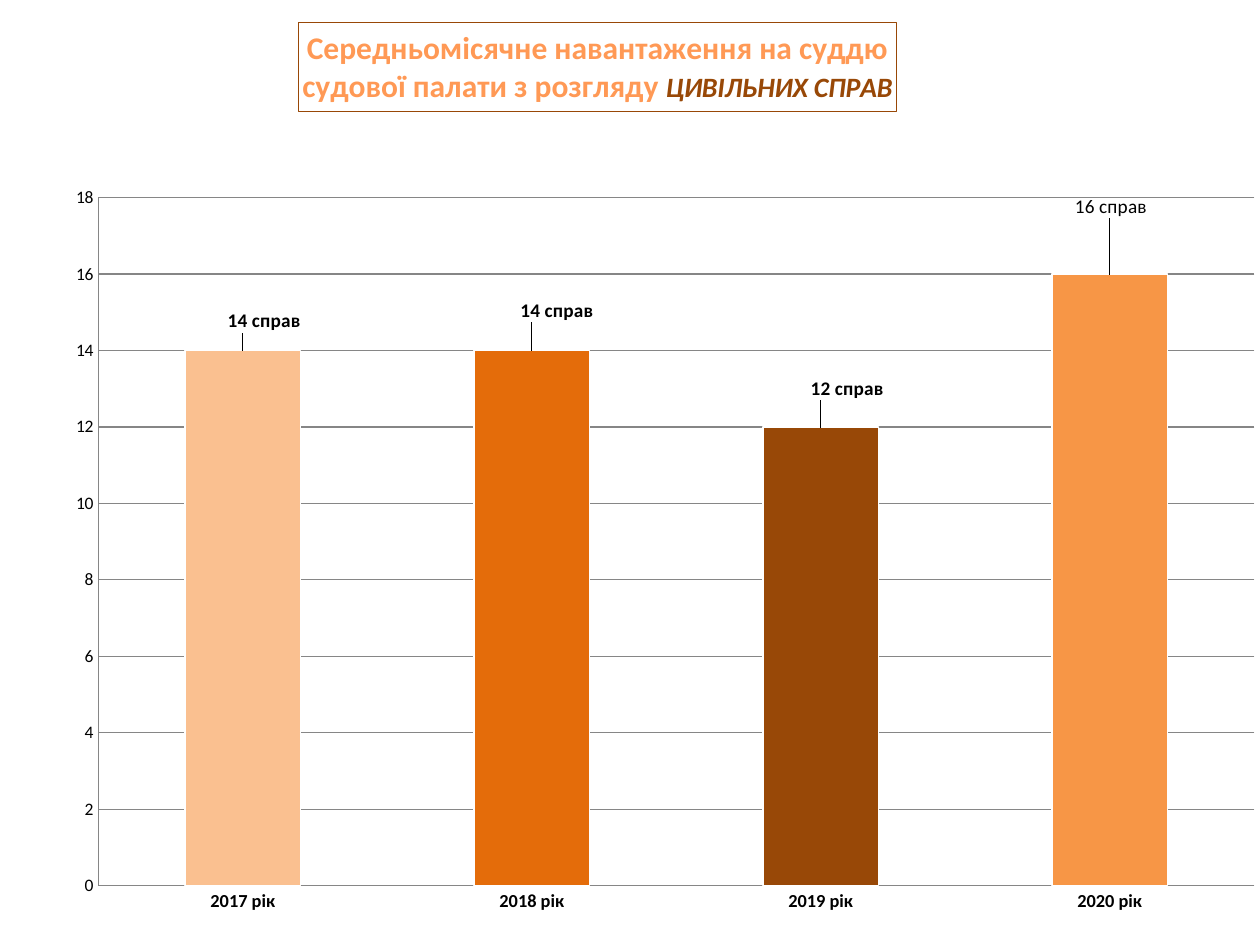
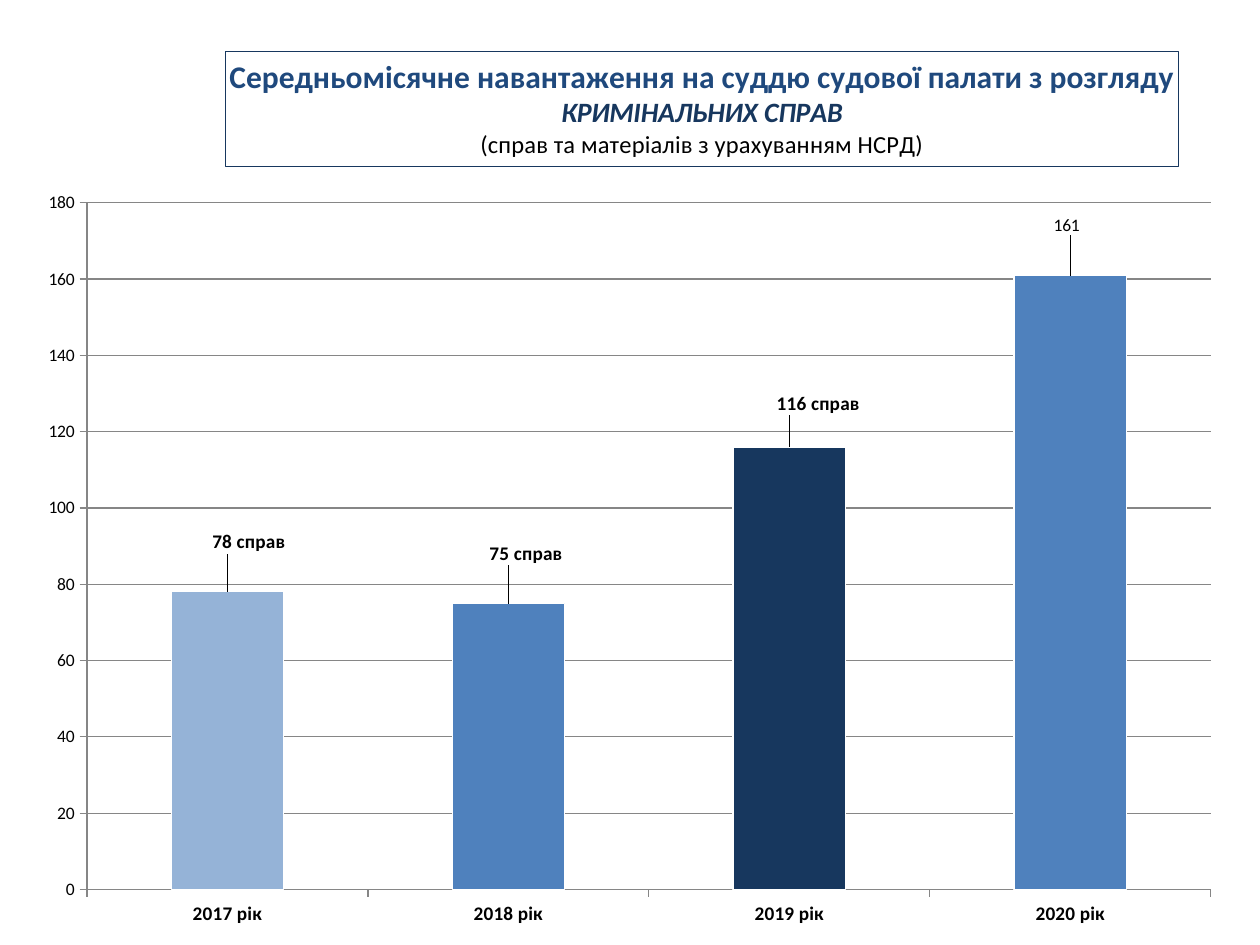
from lxml.etree import SubElement
from pptx import Presentation
from pptx.chart.data import CategoryChartData
from pptx.dml.color import RGBColor
from pptx.enum.chart import XL_CHART_TYPE, XL_LABEL_POSITION, XL_TICK_MARK
from pptx.enum.text import PP_ALIGN
from pptx.oxml.ns import qn
from pptx.util import Inches, Pt

FONT = "Calibri"
BLACK = RGBColor(0x00, 0x00, 0x00)
WHITE = RGBColor(0xFF, 0xFF, 0xFF)
GRID = RGBColor(0x86, 0x86, 0x86)
PEACH = RGBColor(0xFA, 0xC0, 0x90)
APRICOT = RGBColor(0xFF, 0x99, 0x55)
ORANGE = RGBColor(0xF7, 0x96, 0x46)
DARK_ORANGE = RGBColor(0xE4, 0x6C, 0x0A)
BROWN = RGBColor(0x98, 0x48, 0x07)
LIGHT_BLUE = RGBColor(0x95, 0xB3, 0xD7)
BLUE = RGBColor(0x4F, 0x81, 0xBD)
TITLE_BLUE = RGBColor(0x1F, 0x49, 0x7D)
NAVY = RGBColor(0x17, 0x37, 0x5E)
YEARS = ["2017 рік", "2018 рік", "2019 рік", "2020 рік"]

CIVIL = {
    "frame": (0.24, 0, 9.72, 7.5),
    "plot": (0.54, 1.57, 9.18, 5.46),
    "title_at": (2.13, 0.18),
    "border": BROWN,
    "title": [
        [("Середньомісячне навантаження на суддю", 18, True, False, APRICOT)],
        [("судової палати з розгляду ", 18, True, False, APRICOT),
         ("ЦИВІЛЬНИХ СПРАВ", 16, True, True, BROWN)],
    ],
    "values": [14, 14, 12, 16],
    "colors": [PEACH, DARK_ORANGE, BROWN, ORANGE],
    "labels": [("14 справ", 11, True, 0.17, -0.1), ("14 справ", 11, True, 0.2, -0.18),
               ("12 справ", 11, True, 0.21, -0.17), ("16 справ", 11, False, 0.01, -0.4)],
    "top": 18,
    "tick": XL_TICK_MARK.NONE,
    "year_size": 10.5,
}
CRIMINAL = {
    "frame": (0.2, 0.29, 9.61, 7.21),
    "plot": (0.49, 1.32, 8.92, 5.45),
    "title_at": (1.59, 0.12),
    "border": NAVY,
    "title": [
        [("Середньомісячне навантаження на суддю судової палати з розгляду",
          18, True, False, TITLE_BLUE)],
        [("КРИМІНАЛЬНИХ СПРАВ", 16, True, True, NAVY)],
        [("(справ та матеріалів з урахуванням НСРД)", 14, False, False, BLACK)],
    ],
    "values": [78, 75, 116, 161],
    "colors": [LIGHT_BLUE, BLUE, NAVY, BLUE],
    "labels": [("78 справ", 11, True, 0.17, -0.26), ("75 справ", 11, True, 0.14, -0.26),
               ("116 справ", 11, True, 0.23, -0.21), (None, 10, False, -0.03, -0.28)],
    "top": 180,
    "tick": XL_TICK_MARK.OUTSIDE,
    "year_size": 11,
}


def style_font(font, size, bold=False, italic=False, color=BLACK):
    """Apply the deck's typeface with the given size, weight and colour."""
    formats = {"name": FONT, "size": Pt(size), "bold": bold, "italic": italic}
    for name, value in formats.items():
        setattr(font, name, value)
    font.color.rgb = color


def style_line(line, color, width=0.75):
    """Give a line its colour and width."""
    line.color.rgb = color
    line.width = Pt(width)


def set_layout(parent, index, frame, lengths, inner=False):
    """Place a chart part by lengths in inches, relative to the chart frame."""
    for old in parent.findall(qn("c:layout")):
        parent.remove(old)
    layout = parent.makeelement(qn("c:layout"), {})
    parent.insert(index, layout)
    manual = SubElement(layout, qn("c:manualLayout"))
    settings = {"layoutTarget": "inner"} if inner else {}
    if index < 1 or parent.tag == qn("c:title"):
        settings.update(xMode="edge", yMode="edge")
    for name, length, whole in zip("xywh", lengths, frame[2:] * 2):
        settings[name] = f"{length / whole:.4f}"
    for name, value in settings.items():
        SubElement(manual, qn(f"c:{name}")).set("val", value)


def write_title(chart, content):
    """Write the framed chart title."""
    title = chart.chart_title
    text_frame = title.text_frame
    for number, spans in enumerate(content["title"]):
        para = text_frame.add_paragraph() if number else text_frame.paragraphs[0]
        para.alignment = PP_ALIGN.CENTER
        for text, *style in spans:
            span = para.add_run()
            span.text = text
            style_font(span.font, *style)
    style_line(title.format.line, content["border"])
    set_layout(title._element, 1, content["frame"], content["title_at"])


def style_axes(chart, content):
    """Format the year axis, the value axis and the gridlines."""
    years, scale = chart.category_axis, chart.value_axis
    limits = {"minimum_scale": 0, "maximum_scale": content["top"],
              "major_unit": content["top"] / 9, "has_major_gridlines": True}
    for name, value in limits.items():
        setattr(scale, name, value)
    style_line(scale.major_gridlines.format.line, GRID)
    for axis in (years, scale):
        axis.major_tick_mark = content["tick"]
        axis.minor_tick_mark = XL_TICK_MARK.NONE
        style_line(axis.format.line, GRID)
    style_font(years.tick_labels.font, content["year_size"], bold=True)
    style_font(scale.tick_labels.font, 10)


def style_column(point, color, label, frame):
    """Colour one column and place its label."""
    point.format.fill.solid()
    point.format.fill.fore_color.rgb = color
    style_line(point.format.line, WHITE)
    text, size, bold, *offset = label
    data_label = point.data_label
    if text:
        span = data_label.text_frame.paragraphs[0].add_run()
        span.text = text
        style_font(span.font, size, bold)
    else:
        style_font(data_label.font, size, bold)
    data_label.position = XL_LABEL_POSITION.OUTSIDE_END
    set_layout(data_label._get_or_add_dLbl(), 1, frame, offset)


def add_workload_chart(page, content):
    """Add the column chart of monthly cases per judge."""
    data = CategoryChartData()
    data.categories = YEARS
    data.add_series("Series 1", content["values"])
    box = [Inches(length) for length in content["frame"]]
    chart = page.shapes.add_chart(XL_CHART_TYPE.COLUMN_CLUSTERED, *box, data).chart
    chart.has_legend = False
    chart.has_title = True
    style_font(chart.font, 10)
    plot = chart.plots[0]
    plot.gap_width = 150
    plot.vary_by_categories = False
    write_title(chart, content)
    style_axes(chart, content)
    series = plot.series[0]
    for number, (color, label) in enumerate(zip(content["colors"], content["labels"])):
        style_column(series.points[number], color, label, content["frame"])
    plot_area = chart._chartSpace.chart.plotArea
    set_layout(plot_area, 0, content["frame"], content["plot"], inner=True)


def main():
    """Build and save the deck."""
    deck = Presentation()
    deck.slide_width, deck.slide_height = Inches(10), Inches(7.5)
    for content in (CIVIL, CRIMINAL):
        page = deck.slides.add_slide(deck.slide_layouts[6])
        add_workload_chart(page, content)
    deck.save("out.pptx")


if __name__ == "__main__":
    main()
